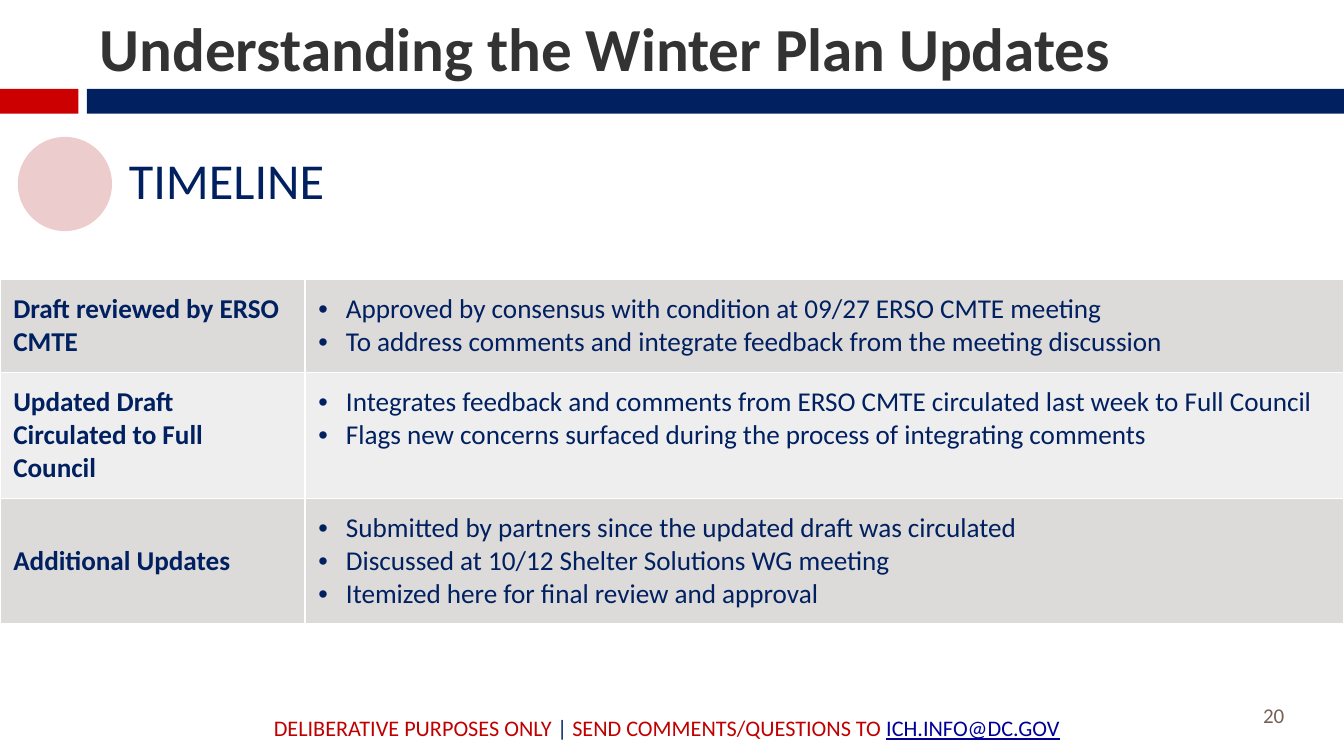
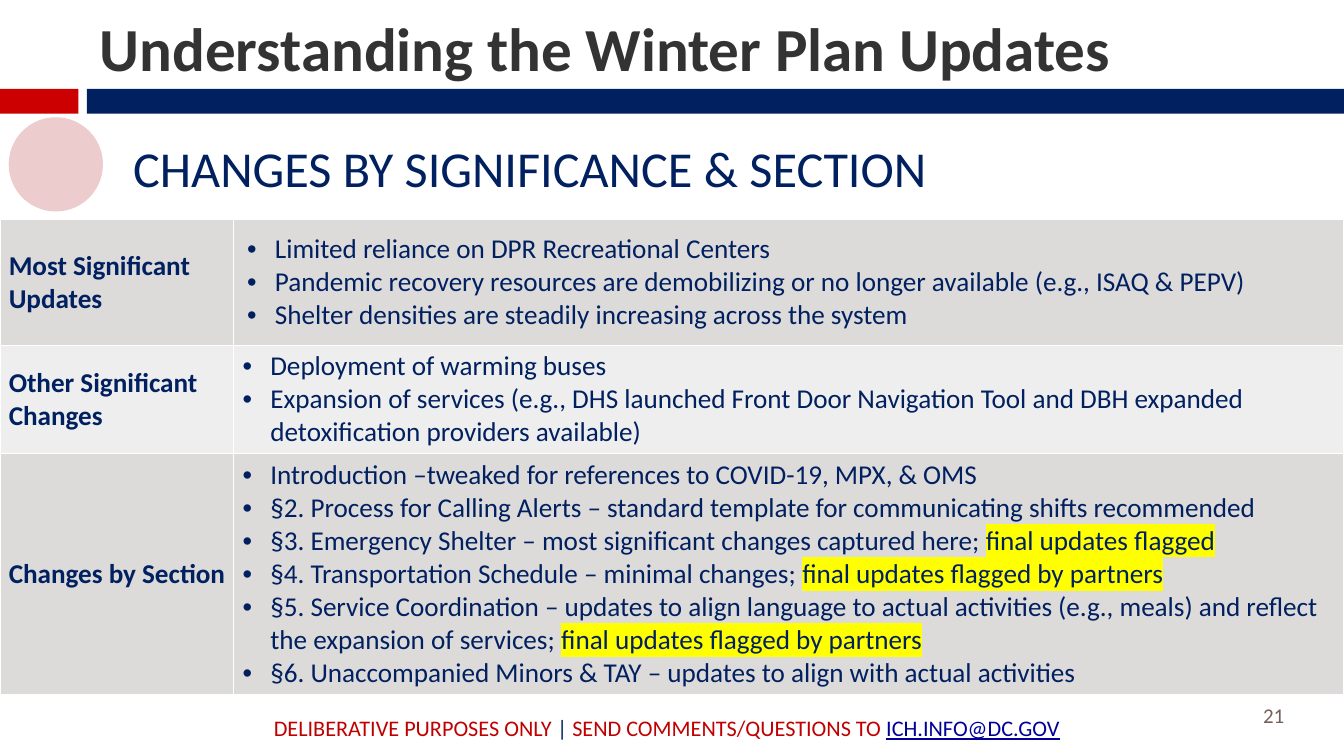
"""Build two table slides about the winter plan updates."""
from lxml.etree import SubElement
from pptx import Presentation
from pptx.dml.color import RGBColor
from pptx.enum.shapes import MSO_SHAPE
from pptx.enum.text import MSO_ANCHOR, MSO_AUTO_SIZE, PP_ALIGN
from pptx.oxml import parse_xml
from pptx.oxml.ns import nsdecls, qn
from pptx.util import Cm, Pt

NAVY, RED, PINK = "002060", "CC0000", "ECCCCC"
DARK_GREY, BROWN, FOOTER_RED, LINK_BLUE = "333333", "775F55", "C00000", "000099"
ROW_FILLS = ["DDDADA", "EFEEEE"]
WHITE, YELLOW = "FFFFFF", "FFFF00"
WIDE_MARGIN = (0.38, 0.38)
NARROW_MARGIN = (0.25, 0.13)
TITLE = "Understanding the Winter Plan Updates"
FOOTER = [
    ("DELIBERATIVE PURPOSES ONLY ", FOOTER_RED, False),
    ("| ", NAVY, False),
    ("SEND COMMENTS/QUESTIONS TO ", FOOTER_RED, False),
    ("ICH.INFO@DC.GOV", LINK_BLUE, True),
]

SLIDES = [
    {
        "number": "20",
        "heading": "TIMELINE",
        "heading_at": (3.68, 4.45),
        "circle_at": (0.51, 3.91),
        "table_top": 7.98,
        "label_width": 8.71,
        "rows": [
            (2.65, WIDE_MARGIN, WIDE_MARGIN, "Draft reviewed by ERSO CMTE", [
                "Approved by consensus with condition at 09/27 ERSO CMTE meeting",
                "To address comments and integrate feedback from the meeting discussion",
            ]),
            (3.58, WIDE_MARGIN, WIDE_MARGIN, "Updated Draft Circulated to Full Council", [
                "Integrates feedback and comments from ERSO CMTE circulated last week to Full Council",
                "Flags new concerns surfaced during the process of integrating comments",
            ]),
            (3.58, WIDE_MARGIN, WIDE_MARGIN, "Additional Updates", [
                "Submitted by partners since the updated draft was circulated",
                "Discussed at 10/12 Shelter Solutions WG meeting",
                "Itemized here for final review and approval",
            ]),
        ],
    },
    {
        "number": "21",
        "heading": "CHANGES BY SIGNIFICANCE & SECTION",
        "heading_at": (3.8, 4.11),
        "circle_at": (0.25, 3.35),
        "table_top": 6.27,
        "label_width": 6.68,
        "rows": [
            (3.58, NARROW_MARGIN, WIDE_MARGIN, "Most Significant Updates", [
                "Limited reliance on DPR Recreational Centers",
                "Pandemic recovery resources are demobilizing or no longer available (e.g., ISAQ & PEPV)",
                "Shelter densities are steadily increasing across the system",
            ]),
            (3.08, NARROW_MARGIN, NARROW_MARGIN, "Other Significant Changes", [
                "Deployment of warming buses",
                "Expansion of services (e.g., DHS launched Front Door Navigation Tool "
                "and DBH expanded detoxification providers available)",
            ]),
            (6.88, NARROW_MARGIN, NARROW_MARGIN, "Changes by Section", [
                "Introduction –tweaked for references to COVID-19, MPX, & OMS",
                "§2. Process for Calling Alerts – standard template for communicating shifts recommended",
                "§3. Emergency Shelter – most significant changes captured here; |final updates flagged",
                "§4. Transportation Schedule – minimal changes; |final updates flagged by partners",
                "§5. Service Coordination – updates to align language to actual activities (e.g., meals) "
                "and reflect the expansion of services; |final updates flagged by partners",
                "§6. Unaccompanied Minors & TAY – updates to align with actual activities",
            ]),
        ],
    },
]


def write_text(paragraph, text, size=22, color=NAVY, bold=False, underline=False, highlight=None):
    """Add a formatted run to a paragraph."""
    run = paragraph.add_run()
    run.text = text
    run.font.size = Pt(size)
    run.font.bold = bold
    run.font.underline = underline
    run.font.color.rgb = RGBColor.from_string(color)
    if highlight:
        fill = run.font.fill._xPr.find(qn("a:solidFill"))
        fill.addnext(parse_xml(
            f'<a:highlight {nsdecls("a")}><a:srgbClr val="{highlight}"/></a:highlight>'))
    run.font.name = "Calibri"


def add_plain_shape(slide, kind, left, top, width, height, color):
    """Add a filled shape without outline or shadow."""
    shape = slide.shapes.add_shape(kind, Cm(left), Cm(top), Cm(width), Cm(height))
    shape.shadow.inherit = False
    shape.fill.solid()
    shape.fill.fore_color.rgb = RGBColor.from_string(color)
    shape.line.fill.background()


presentation = Presentation()
presentation.slide_width = Cm(38.38)
presentation.slide_height = Cm(21.59)

for content in SLIDES:
    slide = presentation.slides.add_slide(presentation.slide_layouts[1])
    add_plain_shape(slide, MSO_SHAPE.RECTANGLE, 0, 2.54, 2.24, 0.71, RED)
    add_plain_shape(slide, MSO_SHAPE.RECTANGLE, 2.48, 2.54, 35.9, 0.71, NAVY)
    add_plain_shape(slide, MSO_SHAPE.OVAL, *content["circle_at"], 2.69, 2.69, PINK)

    title = slide.shapes.title
    title.left, title.top, title.width, title.height = Cm(2.57), Cm(0.25), Cm(31.22), Cm(2.31)
    heading = slide.placeholders[1]
    heading.left, heading.top = [Cm(length) for length in content["heading_at"]]
    heading.width, heading.height = Cm(33), Cm(1.8)
    footer = slide.shapes.add_textbox(Cm(7.57), Cm(20.27), Cm(23.93), Cm(1.02))
    number = slide.shapes.add_textbox(Cm(35.79), Cm(19.79), Cm(1.91), Cm(1.14))

    for shape, anchor, line_spacing, margin in [
        (title, MSO_ANCHOR.BOTTOM, 0.9, 0.28),
        (heading, MSO_ANCHOR.TOP, 0.8, 0),
        (footer, MSO_ANCHOR.MIDDLE, 1.0, 0.25),
        (number, MSO_ANCHOR.BOTTOM, 0.9, 0.28),
    ]:
        frame = shape.text_frame
        frame.auto_size = MSO_AUTO_SIZE.NONE
        frame.word_wrap = True
        frame.vertical_anchor = anchor
        frame.margin_left = frame.margin_right = Cm(margin)
        frame.margin_top = frame.margin_bottom = Cm(0.15)
        paragraph = frame.paragraphs[0]
        paragraph.alignment = PP_ALIGN.LEFT
        paragraph.line_spacing = line_spacing
        paragraph.space_before = Pt(0)

    properties = heading.text_frame.paragraphs[0]._p.get_or_add_pPr()
    properties.set("marL", "0")
    properties.set("indent", "0")
    SubElement(properties, qn("a:buNone"))

    write_text(title.text_frame.paragraphs[0], TITLE, size=49.5, color=DARK_GREY, bold=True)
    write_text(heading.text_frame.paragraphs[0], content["heading"], size=40.7)
    number.text_frame.paragraphs[0].space_after = Pt(6)
    write_text(number.text_frame.paragraphs[0], content["number"], size=17, color=BROWN)
    for text, color, underline in FOOTER:
        write_text(footer.text_frame.paragraphs[0], text, size=18, color=color, underline=underline)

    rows = content["rows"]
    table_height = Cm(sum(row[0] for row in rows))
    table = slide.shapes.add_table(
        len(rows), 2, 0, Cm(content["table_top"]), presentation.slide_width, table_height).table
    table.first_row = table.horz_banding = False
    table.columns[0].width = Cm(content["label_width"])
    table.columns[1].width = presentation.slide_width - Cm(content["label_width"])

    for row_index, (height, label_margin, list_margin, label, bullets) in enumerate(rows):
        table.rows[row_index].height = Cm(height)
        label_cell, list_cell = table.rows[row_index].cells
        label_cell.vertical_anchor = MSO_ANCHOR.MIDDLE
        list_cell.vertical_anchor = MSO_ANCHOR.TOP

        for cell, (side, edge) in [(label_cell, label_margin), (list_cell, list_margin)]:
            cell.margin_left = cell.margin_right = Cm(side)
            cell.margin_top = cell.margin_bottom = Cm(edge)
            cell.fill.solid()
            cell.fill.fore_color.rgb = RGBColor.from_string(ROW_FILLS[row_index % 2])
            for position, border in enumerate(["lnL", "lnR", "lnT", "lnB"]):
                cell._tc.get_or_add_tcPr().insert(position, parse_xml(
                    f'<a:{border} {nsdecls("a")} w="12700"><a:solidFill>'
                    f'<a:srgbClr val="{WHITE}"/></a:solidFill></a:{border}>'))

        write_text(label_cell.text_frame.paragraphs[0], label, bold=True)
        for bullet_index, bullet in enumerate(bullets):
            frame = list_cell.text_frame
            paragraph = frame.add_paragraph() if bullet_index else frame.paragraphs[0]
            properties = paragraph._p.get_or_add_pPr()
            properties.set("marL", str(Cm(0.79)))
            properties.set("indent", str(-Cm(0.79)))
            SubElement(properties, qn("a:buFont"), typeface="Arial")
            SubElement(properties, qn("a:buChar"), char="•")
            plain, _, flagged = bullet.partition("|")
            write_text(paragraph, plain)
            if flagged:
                write_text(paragraph, flagged, highlight=YELLOW)

presentation.save("out.pptx")
